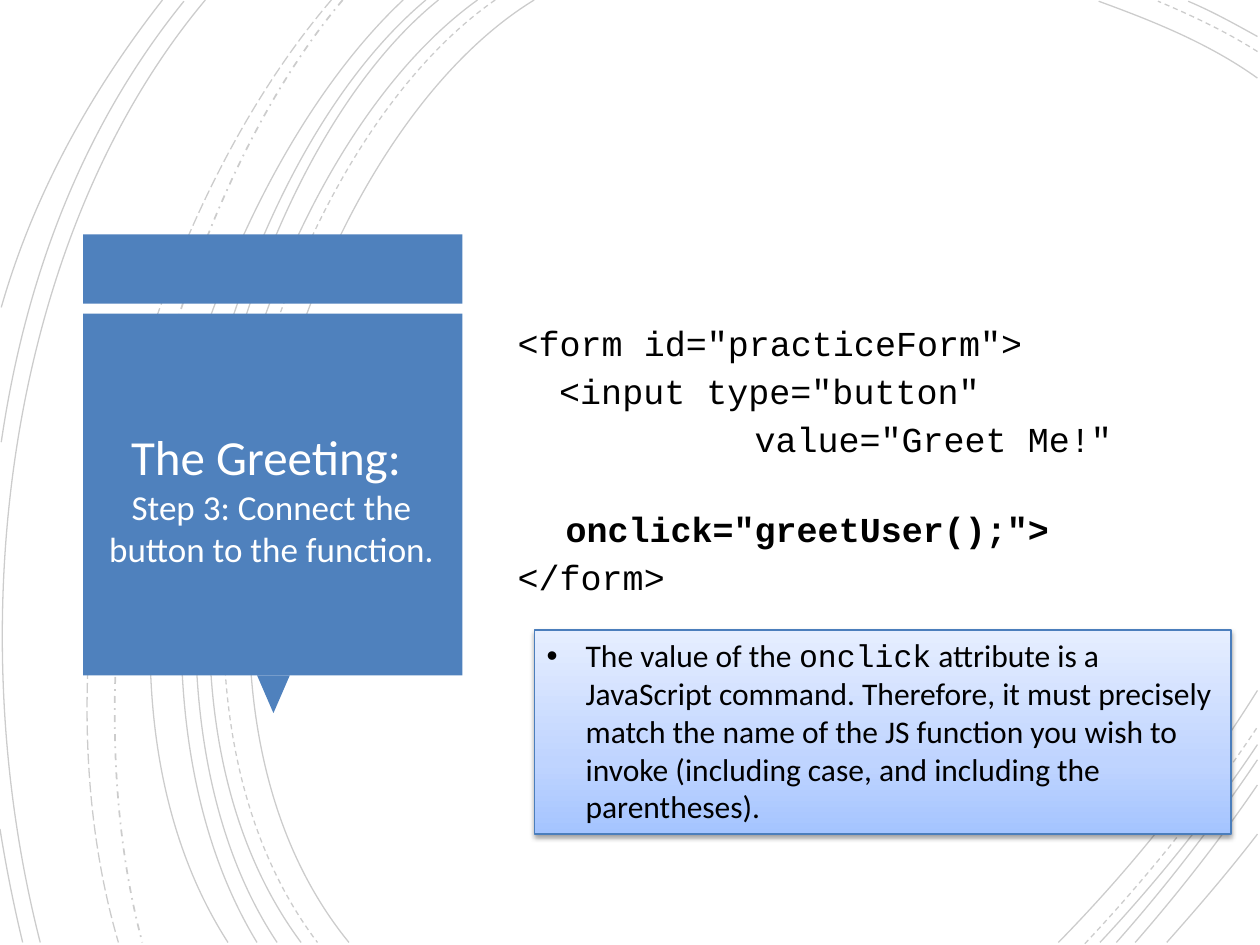
from lxml import etree
from pptx import Presentation
from pptx.dml.color import RGBColor
from pptx.enum.dml import MSO_LINE
from pptx.enum.shapes import MSO_SHAPE
from pptx.enum.text import MSO_ANCHOR, MSO_AUTO_SIZE, PP_ALIGN
from pptx.oxml import parse_xml
from pptx.oxml.ns import nsdecls, qn
from pptx.util import Inches, Pt

BLACK = RGBColor(0x00, 0x00, 0x00)
WHITE = RGBColor(0xFF, 0xFF, 0xFF)
BLUE = RGBColor(0x4F, 0x81, 0xBD)
BORDER_BLUE = RGBColor(0x4B, 0x7E, 0xBC)
SOLID, DASH = MSO_LINE.SOLID, MSO_LINE.DASH
DASH_DOT, LONG_DASH = MSO_LINE.DASH_DOT, MSO_LINE.LONG_DASH
RECTANGLE, TRIANGLE = MSO_SHAPE.RECTANGLE, MSO_SHAPE.ISOSCELES_TRIANGLE
TOP, MIDDLE = MSO_ANCHOR.TOP, MSO_ANCHOR.MIDDLE
CENTER, LEFT = PP_ALIGN.CENTER, PP_ALIGN.LEFT
NO_FIT, GROW = MSO_AUTO_SIZE.NONE, MSO_AUTO_SIZE.SHAPE_TO_FIT_TEXT

# Each arc: dash style, then the four Bezier points (start, two controls, end)
ARCS = [
    (SOLID, (4.24, 0), (2.36, 1.15), (1.07, 5.4), (2.77, 7.48)),
    (SOLID, (9.98, 0.62), (9.59, 0.34), (9.13, 0.16), (8.72, 0.01)),
    (SOLID, (8.4, 7.48), (8.97, 6.9), (9.52, 6.22), (9.98, 5.48)),
    (DASH, (3.93, 0), (2.13, 1.25), (0.92, 5.37), (2.52, 7.48)),
    (DASH, (9.98, 0.41), (9.73, 0.25), (9.45, 0.12), (9.19, 0.01)),
    (DASH, (8.61, 7.49), (9.09, 6.98), (9.56, 6.4), (9.98, 5.77)),
    (SOLID, (3.79, 0), (2.02, 1.27), (0.82, 5.37), (2.39, 7.48)),
    (SOLID, (9.98, 0.29), (9.8, 0.19), (9.62, 0.09), (9.43, 0.01)),
    (SOLID, (8.73, 7.48), (9.17, 7.01), (9.6, 6.48), (9.98, 5.91)),
    (SOLID, (3.48, 0), (1.83, 1.33), (0.82, 5.41), (2.2, 7.48)),
    (SOLID, (8.86, 7.48), (9.25, 7.04), (9.63, 6.55), (9.98, 6.03)),
    (SOLID, (3.38, 0), (1.73, 1.38), (0.73, 5.33), (2.04, 7.48)),
    (SOLID, (9.01, 7.48), (9.35, 7.09), (9.68, 6.67), (9.98, 6.23)),
    (SOLID, (3.2, 0), (1.63, 1.47), (0.4, 5.29), (1.81, 7.48)),
    (SOLID, (9.26, 7.48), (9.5, 7.21), (9.75, 6.92), (9.98, 6.62)),
    (DASH_DOT, (2.72, 0), (1.32, 1.66), (0.49, 5.09), (1.13, 7.48)),
    (LONG_DASH, (2.63, 0), (1.18, 1.69), (0.21, 4.99), (0.94, 7.48)),
    (SOLID, (1.63, 0), (0.08, 1.85), (-0.34, 4.9), (0.32, 7.48)),
    (SOLID, (1.46, 0.01), (0.69, 0.96), (0.21, 2.14), (0.01, 3.51)),
    (SOLID, (0, 6.58), (0.05, 6.89), (0.11, 7.19), (0.18, 7.48)),
    (SOLID, (1.29, 0), (0.75, 0.69), (0.28, 1.5), (0.01, 2.44)),
]

# Each code line: left indent in inches, space before in points, bold, text
CODE_LINES = [
    (0, 0, False, '<form id="practiceForm">'),
    (0.33, 3.5, False, '<input type="button"'),
    (1.88, 3.5, False, 'value="Greet Me!"'),
    (0.38, 27.5, True, 'onclick="greetUser();">'),
    (0, 3.5, False, '</form>'),
]


def bend(freeform):
    """Turn the three segments of a freeform into one cubic Bezier curve."""
    outline = freeform.element.spPr.find(".//" + qn("a:path"))
    segments = outline.findall(qn("a:lnTo"))
    curve = etree.SubElement(outline, qn("a:cubicBezTo"))
    for segment in segments:
        curve.append(segment[0])
        outline.remove(segment)


def set_indent(para, left, first_line):
    properties = para._p.get_or_add_pPr()
    properties.set("marL", str(Inches(left)))
    properties.set("indent", str(Inches(first_line)))
    return properties


deck = Presentation()
deck.slide_width, deck.slide_height = Inches(10), Inches(7.5)
page = deck.slides.add_slide(deck.slide_layouts[5])
title = page.shapes.title

# Background arcs
arcs = page.shapes.add_group_shape()
for dash, *points in ARCS:
    start, *others = [(Inches(x), Inches(y)) for x, y in points]
    builder = arcs.shapes.build_freeform(*start)
    builder.add_line_segments(others, close=False)
    arc = builder.convert_to_shape()
    bend(arc)
    arc.shadow.inherit = False
    arc.fill.background()
    arc.line.color.rgb = BLACK
    arc.line.width = Pt(1 if dash == DASH_DOT else 0.75)
    arc.line.dash_style = dash
    color = arc.element.spPr.find(".//" + qn("a:srgbClr"))
    etree.SubElement(color, qn("a:alpha")).set("val", "20000")

# Title panel
panel = page.shapes.add_group_shape()
for kind, left, top, width, height, rotation in [
    (RECTANGLE, 0.66, 1.86, 3.01, 0.55, 0),
    (TRIANGLE, 2.04, 5.36, 0.26, 0.3, 180),
    (RECTANGLE, 0.66, 2.49, 3.01, 2.87, 0),
]:
    part = panel.shapes.add_shape(kind, Inches(left), Inches(top),
                                  Inches(width), Inches(height))
    part.rotation = rotation
    part.shadow.inherit = False
    part.fill.solid()
    part.fill.fore_color.rgb = BLUE
    part.line.fill.background()

# Title, brought in front of its panel
title.element.getparent().append(title.element)
title.left, title.top = Inches(0.74), Inches(2.64)
title.width, title.height = Inches(2.83), Inches(2.62)
title.text_frame.auto_size = NO_FIT
title.text_frame.vertical_anchor = MIDDLE
para = title.text_frame.paragraphs[0]
para.alignment = CENTER
para.font.name = "Calibri"
para.font.color.rgb = WHITE
span = para.add_run()
span.text = "The Greeting: "
span.font.size = Pt(28)
para.add_line_break()
span = para.add_run()
span.text = "Step 3: Connect the button to the function."
span.font.size = Pt(20)

# Code sample
code_box = page.shapes.add_textbox(Inches(4.01), Inches(2.64), Inches(5.88), Inches(2.28))
code = code_box.text_frame
code.word_wrap = True
code.vertical_anchor = MIDDLE
code.margin_bottom = Inches(0.32)
for index, (indent, space, bold, text) in enumerate(CODE_LINES):
    para = code.add_paragraph() if index else code.paragraphs[0]
    para.text = text
    set_indent(para, indent, 0)
    para.space_before = Pt(space)
    para.font.name = "Courier New"
    para.font.size = Pt(20)
    para.font.bold = bold
    para.font.color.rgb = BLACK

# Explanation box
note = page.shapes.add_shape(RECTANGLE, Inches(4.24), Inches(5), Inches(5.53), Inches(1.62))
note.fill.gradient()
note.fill.gradient_angle = 90
stops = note.element.spPr.find(".//" + qn("a:gsLst"))
for stop in list(stops):
    stops.remove(stop)
for position, color in [(0, "A4C4FF"), (35, "BFD4FF"), (100, "E6EEFF")]:
    stops.append(parse_xml(f'<a:gs {nsdecls("a")} pos="{position * 1000}">'
                           f'<a:srgbClr val="{color}"/></a:gs>'))
note.line.color.rgb = BORDER_BLUE
note.line.width = Pt(0.75)
note.shadow.inherit = False
note.element.spPr.find(qn("a:effectLst")).append(parse_xml(
    f'<a:outerShdw {nsdecls("a")} blurRad="{Pt(3.1)}" dist="{Pt(1.6)}" dir="5400000" '
    'rotWithShape="0"><a:srgbClr val="000000"><a:alpha val="38000"/></a:srgbClr>'
    '</a:outerShdw>'))
note.text_frame.word_wrap = True
note.text_frame.auto_size = GROW
note.text_frame.vertical_anchor = TOP
para = note.text_frame.paragraphs[0]
para.alignment = LEFT
para.font.size = Pt(18)
para.font.color.rgb = BLACK
bullet = set_indent(para, 0.31, -0.31)
bullet.insert(0, parse_xml(f'<a:buChar {nsdecls("a")} char="•"/>'))
bullet.insert(0, parse_xml(f'<a:buFont {nsdecls("a")} typeface="Arial"/>'))
for font_name, text in [
    ("Calibri", "The value of the "),
    ("Courier New", "onclick"),
    ("Calibri", " attribute is a JavaScript command. Therefore, it must precisely match "
                "the name of the JS function you wish to invoke (including case, and "
                "including the parentheses)."),
]:
    span = para.add_run()
    span.text = text
    span.font.name = font_name

deck.save("out.pptx")
